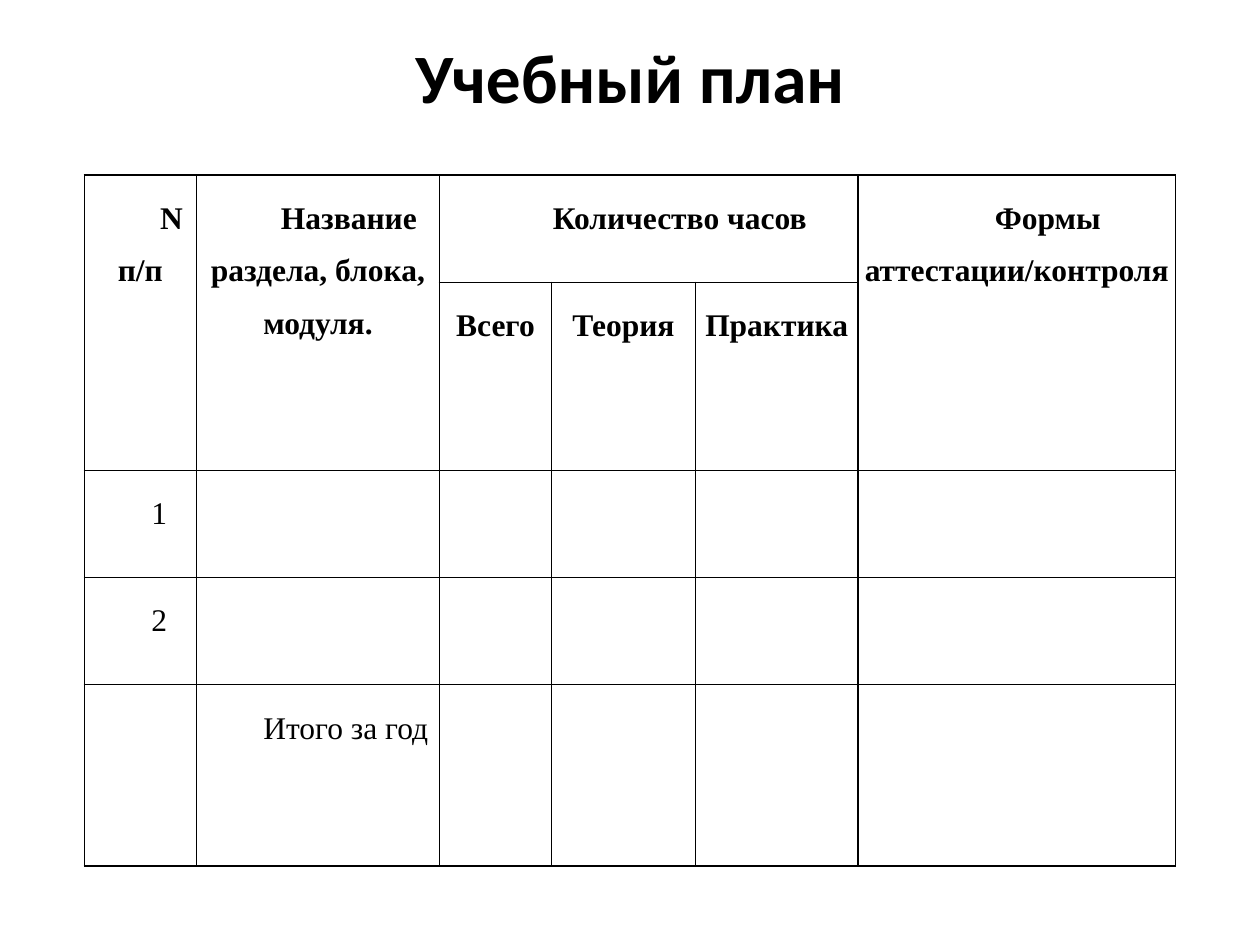
from lxml import etree
from pptx import Presentation
from pptx.dml.color import RGBColor
from pptx.enum.text import MSO_ANCHOR, PP_ALIGN
from pptx.oxml.ns import qn
from pptx.util import Cm, Pt

BLACK = RGBColor(0, 0, 0)
WHITE = RGBColor(255, 255, 255)
CENTER = PP_ALIGN.CENTER
JUSTIFY = PP_ALIGN.JUSTIFY
MIDDLE = MSO_ANCHOR.MIDDLE

COLUMN_WIDTHS = [2.26, 4.9, 2.26, 2.9, 3.28, 6.4]
ROW_HEIGHTS = [2.16, 3.66, 2.16, 2.16, 3.66]
HEADER_ROWS = 2
MERGES = [((0, 0), (1, 0)), ((0, 1), (1, 1)), ((0, 2), (0, 4)), ((0, 5), (1, 5))]
CELL_TEXTS = [
    ["N п/п", "Название раздела, блока, модуля.", "Количество часов", "", "",
     "Формы аттестации/контроля"],
    ["", "", "Всего", "Теория", "Практика", ""],
    ["1", "", "", "", "", ""],
    ["2", "", "", "", "", ""],
    ["", "Итого за год", "", "", "", ""],
]


def style_font(font, name, size, bold):
    font.name = name
    font.size = Pt(size)
    font.bold = bold
    font.color.rgb = BLACK


def add_title(slide, text):
    shape = slide.shapes.add_textbox(Cm(1.27), Cm(0.76), Cm(22.86), Cm(1.55))
    frame = shape.text_frame
    frame.word_wrap = True
    frame.vertical_anchor = MIDDLE
    paragraph = frame.paragraphs[0]
    paragraph.text = text
    paragraph.alignment = CENTER
    style_font(paragraph.font, "Calibri", 39.6, True)


def add_borders(cell):
    properties = cell._tc.get_or_add_tcPr()
    for position, side in enumerate(("lnL", "lnR", "lnT", "lnB")):
        line = etree.Element(qn(f"a:{side}"), w=str(Pt(1)))
        fill = etree.SubElement(line, qn("a:solidFill"))
        etree.SubElement(fill, qn("a:srgbClr"), val=str(BLACK))
        properties.insert(position, line)


def format_cell(cell, text, is_header, is_indented):
    cell.fill.solid()
    cell.fill.fore_color.rgb = WHITE
    cell.margin_left = cell.margin_right = Cm(0.1)
    cell.margin_top = cell.margin_bottom = Cm(0.18)
    add_borders(cell)
    paragraph = cell.text_frame.paragraphs[0]
    paragraph.text = text
    paragraph.alignment = CENTER if is_header else JUSTIFY
    paragraph.line_spacing = 1.5
    style_font(paragraph.font, "Times New Roman", 18, is_header)
    if is_indented:
        paragraph._p.get_or_add_pPr().set("indent", str(Cm(1.25)))


def add_plan_table(slide):
    shape = slide.shapes.add_table(
        len(ROW_HEIGHTS), len(COLUMN_WIDTHS), Cm(1.7), Cm(3.53),
        Cm(sum(COLUMN_WIDTHS)), Cm(sum(ROW_HEIGHTS)))
    table = shape.table
    table.first_row = False
    table.horz_banding = False
    for column, width in zip(table.columns, COLUMN_WIDTHS):
        column.width = Cm(width)
    for row, height in zip(table.rows, ROW_HEIGHTS):
        row.height = Cm(height)
    for first, last in MERGES:
        table.cell(*first).merge(table.cell(*last))
    for row_index, texts in enumerate(CELL_TEXTS):
        for column_index, text in enumerate(texts):
            format_cell(table.cell(row_index, column_index), text,
                        row_index < HEADER_ROWS, row_index != 1)


def main():
    presentation = Presentation()
    presentation.slide_width = Cm(25.4)
    presentation.slide_height = Cm(19.05)
    slide = presentation.slides.add_slide(presentation.slide_layouts[6])
    add_title(slide, "Учебный план")
    add_plan_table(slide)
    presentation.save("out.pptx")


if __name__ == "__main__":
    main()
